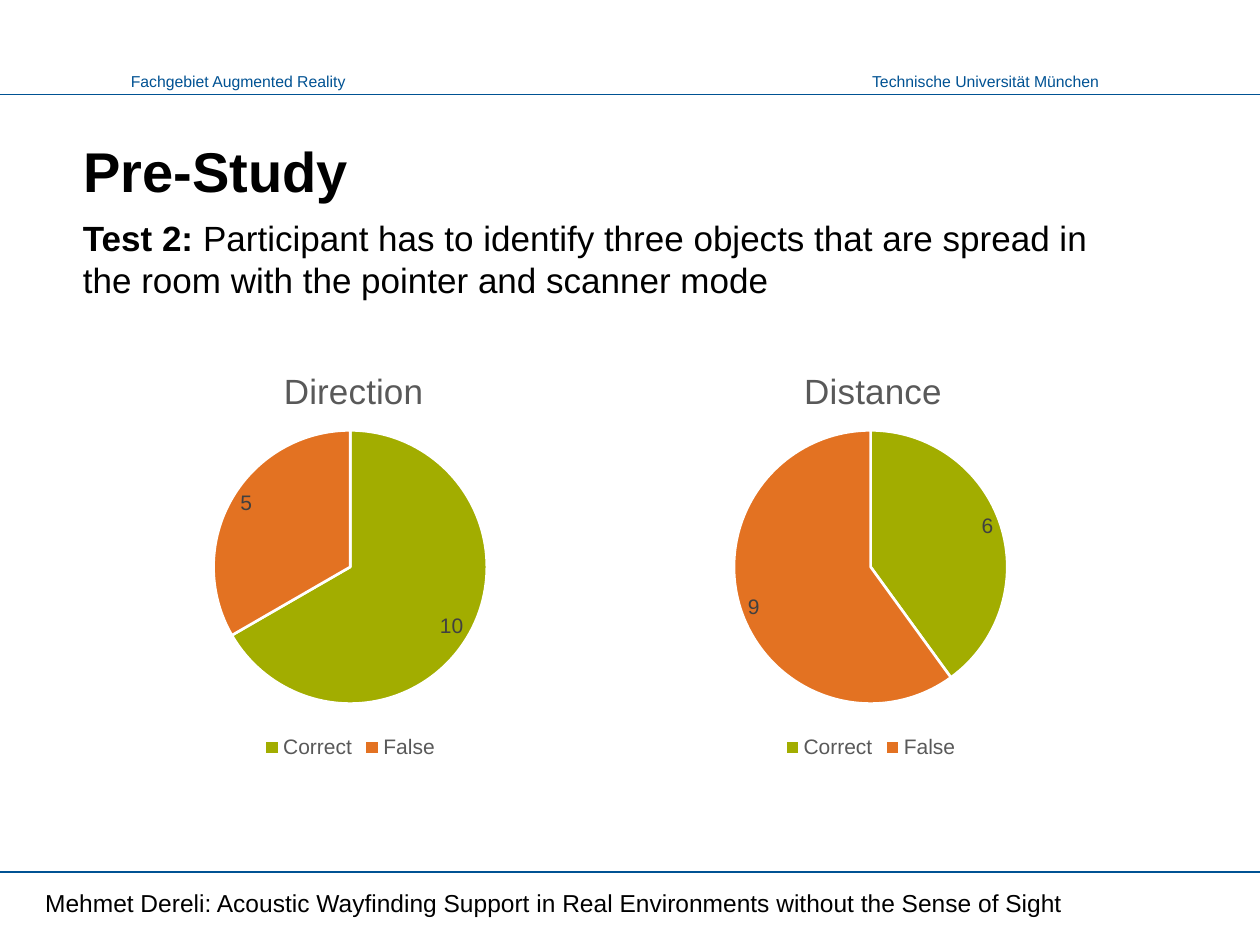
from lxml import etree
from pptx import Presentation
from pptx.chart.data import CategoryChartData
from pptx.dml.color import RGBColor
from pptx.enum.chart import XL_CHART_TYPE, XL_LABEL_POSITION, XL_LEGEND_POSITION
from pptx.enum.shapes import MSO_CONNECTOR
from pptx.enum.text import MSO_ANCHOR, PP_ALIGN
from pptx.oxml.ns import qn
from pptx.util import Inches, Pt

PIE = XL_CHART_TYPE.PIE
BEST_FIT = XL_LABEL_POSITION.BEST_FIT
LEGEND_BOTTOM = XL_LEGEND_POSITION.BOTTOM
STRAIGHT = MSO_CONNECTOR.STRAIGHT
ANCHOR_BOTTOM = MSO_ANCHOR.BOTTOM
LEFT, RIGHT = PP_ALIGN.LEFT, PP_ALIGN.RIGHT

BLUE = RGBColor(0x00, 0x52, 0x93)
BLACK = RGBColor(0x00, 0x00, 0x00)
WHITE = RGBColor(0xFF, 0xFF, 0xFF)
GREEN = RGBColor(0xA2, 0xAD, 0x00)
ORANGE = RGBColor(0xE3, 0x72, 0x22)
GREY = RGBColor(0x59, 0x59, 0x59)
DARK_GREY = RGBColor(0x40, 0x40, 0x40)

SLIDE_WIDTH, SLIDE_HEIGHT = 10, 7.5
MARGIN = 0.56
CHART_WIDTH, CHART_HEIGHT = 4.44, 3.39
RESULTS = [
    ("Direction", 0.56, (10, 5)),
    ("Distance", 4.69, (6, 9)),
]


def format_font(font, size, color, bold=False):
    values = {"name": "Arial", "size": Pt(size), "bold": bold}
    for attribute, value in values.items():
        setattr(font, attribute, value)
    font.color.rgb = color


def add_text(slide, box, runs, size, color=BLACK, align=LEFT, wrap=True):
    """Add one paragraph made of (text, bold) runs and return it."""
    frame = slide.shapes.add_textbox(*map(Inches, box)).text_frame
    frame.word_wrap = wrap
    paragraph = frame.paragraphs[0]
    paragraph.alignment = align
    for text, bold in runs:
        run = paragraph.add_run()
        run.text = text
        format_font(run.font, size, color, bold)
    return paragraph


def add_rule(slide, top):
    rule = slide.shapes.add_connector(
        STRAIGHT, 0, Inches(top), Inches(SLIDE_WIDTH), Inches(top))
    rule.line.color.rgb = BLUE
    rule.line.width = Pt(0.75)
    properties = rule.line._get_or_add_ln().getparent()
    etree.SubElement(properties, qn("a:effectLst"))


def add_header(slide, top):
    labels = [
        ("Fachgebiet Augmented Reality", 0.91, 1.93),
        ("Technische Universität München", 6.81, 2.01),
    ]
    for label, left, width in labels:
        add_text(slide, (left, top, width, 0.25), [(label, False)], 9, BLUE,
                 RIGHT, wrap=False)
    add_rule(slide, 0.75)


def place_title(slide, box):
    title = slide.shapes.title
    for side, length in zip(("left", "top", "width", "height"), box):
        setattr(title, side, Inches(length))
    title.text_frame.text = "Pre-Study"
    title.text_frame.vertical_anchor = ANCHOR_BOTTOM
    paragraph = title.text_frame.paragraphs[0]
    paragraph.alignment = LEFT
    format_font(paragraph.runs[0].font, 32, BLACK, bold=True)


def set_layout(element, **fractions):
    """Fix a chart part at fractions of the chart's size."""
    layout = element.find(qn("c:layout"))
    if layout is None:
        layout = etree.Element(qn("c:layout"))
        text = element.find(qn("c:tx"))
        element.insert(0 if text is None else element.index(text) + 1, layout)
    manual = etree.SubElement(layout, qn("c:manualLayout"))
    if "w" in fractions:
        etree.SubElement(manual, qn("c:layoutTarget")).set("val", "inner")
    for axis in "xy":
        etree.SubElement(manual, qn(f"c:{axis}Mode")).set("val", "edge")
    for side, fraction in fractions.items():
        etree.SubElement(manual, qn(f"c:{side}")).set("val", str(fraction))


def add_result_pie(slide, box, title, counts):
    data = CategoryChartData()
    data.categories = ["Correct", "False"]
    data.add_series("Series 1", counts)
    chart = slide.shapes.add_chart(PIE, *map(Inches, box), data).chart
    format_font(chart.font, 10, BLACK)

    chart.has_title = True
    heading = chart.chart_title.text_frame
    heading.text = title
    format_font(heading.paragraphs[0].runs[0].font, 20, GREY)
    chart.chart_title.include_in_layout = False

    chart.has_legend = True
    chart.legend.position = LEGEND_BOTTOM
    chart.legend.include_in_layout = False
    format_font(chart.legend.font, 12, GREY)

    plot = chart.plots[0]
    plot.vary_by_categories = True
    for index, color in enumerate((GREEN, ORANGE)):
        slice_format = plot.series[0].points[index].format
        slice_format.fill.solid()
        slice_format.fill.fore_color.rgb = color
        slice_format.line.color.rgb = WHITE
        slice_format.line.width = Pt(1.5)
    labels = plot.series[0].data_labels
    labels.show_value = True
    labels.position = BEST_FIT
    format_font(labels.font, 12, DARK_GREY)

    chart_xml = chart.element.find(qn("c:chart"))
    set_layout(chart_xml.find(qn("c:title")), x=0.37, y=0.06)
    set_layout(chart_xml.find(qn("c:plotArea")), x=0.255, y=0.22, w=0.49, h=0.64)


def add_footer(slide, box):
    add_rule(slide, 6.92)
    text = ("Mehmet Dereli: Acoustic Wayfinding Support in Real Environments "
            "without the Sense of Sight")
    add_text(slide, box, [(text, False)], 14)


def main():
    presentation = Presentation()
    presentation.slide_width = Inches(SLIDE_WIDTH)
    presentation.slide_height = Inches(SLIDE_HEIGHT)
    slide = presentation.slides.add_slide(presentation.slide_layouts[5])

    add_header(slide, 0.52)
    place_title(slide, (MARGIN, 1, 9.36, 0.67))
    task = add_text(slide, (MARGIN, 1.67, 8.27, 0.77), [
        ("Test 2: ", True),
        ("Participant has to identify three objects that are spread in "
         "the room with the pointer and scanner mode", False),
    ], 20)
    task.line_spacing = Pt(24)
    for title, left, counts in RESULTS:
        add_result_pie(slide, (left, 2.67, CHART_WIDTH, CHART_HEIGHT),
                       title, counts)
    add_footer(slide, (0.26, 7, 9.47, 0.34))
    presentation.save("out.pptx")


if __name__ == "__main__":
    main()
